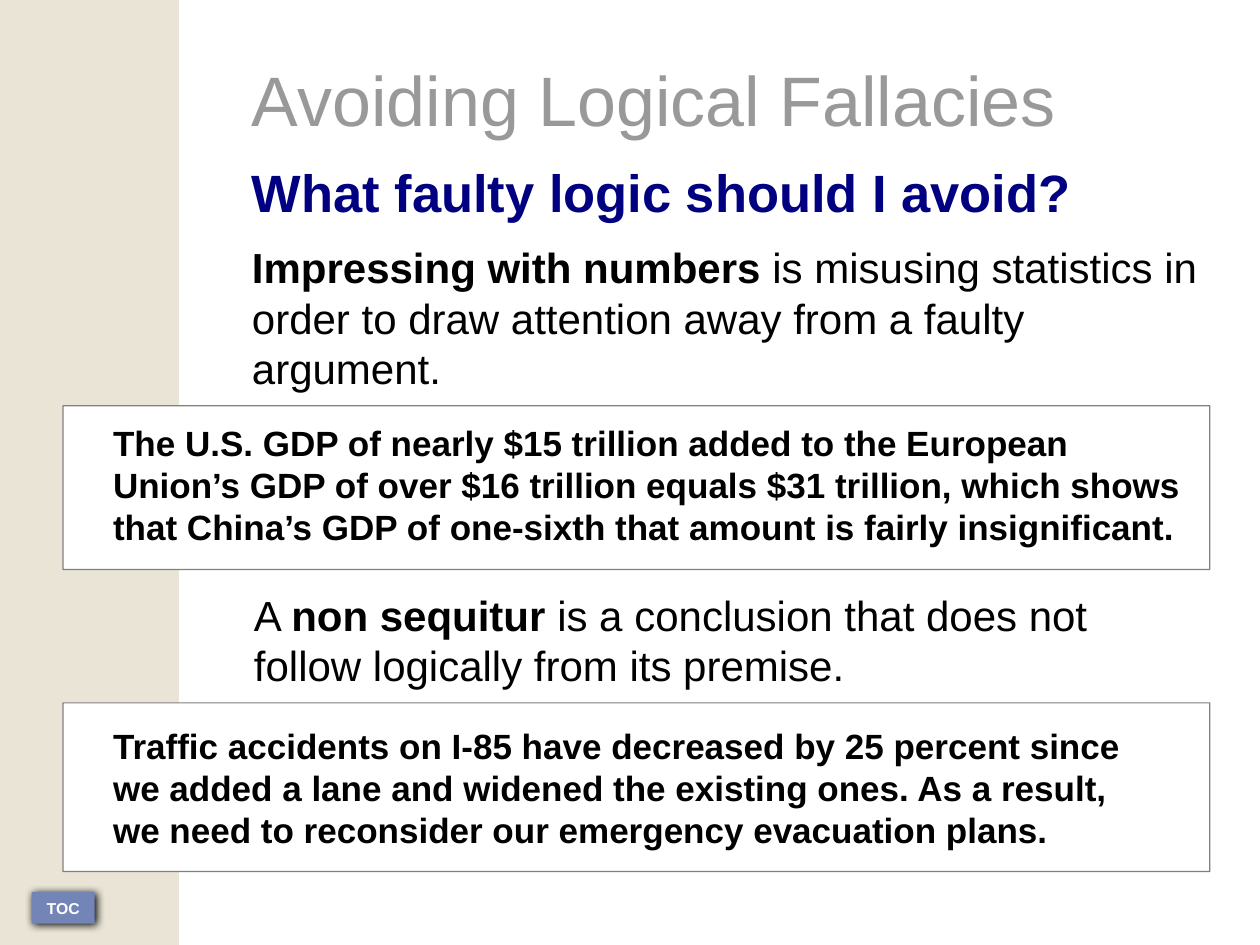
import dataclasses

import lxml.etree
import pptx
import pptx.dml.color
import pptx.enum.shapes
import pptx.enum.text
import pptx.oxml.ns
import pptx.util

Cm = pptx.util.Cm
Pt = pptx.util.Pt
SHAPES = pptx.enum.shapes.MSO_SHAPE


@dataclasses.dataclass(frozen=True)
class Theme:
    font: str = "Arial"
    sidebar: str = "E9E4D5"
    button: str = "7384B6"
    title: str = "999999"
    question: str = "000080"
    ink: str = "000000"
    paper: str = "FFFFFF"
    frame: str = "808080"
    title_size: int = 40
    question_size: int = 30
    definition_size: int = 24
    example_size: int = 20
    button_size: int = 9


THEME = Theme()


def rgb(value):
    return pptx.dml.color.RGBColor.from_string(value)


def add_panel(slide, kind, left, top, width, height, fill, line=None):
    panel = slide.shapes.add_shape(kind, Cm(left), Cm(top), Cm(width), Cm(height))
    panel.shadow.inherit = False
    panel.fill.solid()
    panel.fill.fore_color.rgb = rgb(fill)
    if line:
        panel.line.color.rgb = rgb(line)
        panel.line.width = Pt(0.71)
    else:
        panel.line.fill.background()
    return panel


def add_runs(paragraph, runs, size, color):
    for words, bold in runs:
        run = paragraph.add_run()
        run.text = words
        run.font.name = THEME.font
        run.font.size = Pt(size)
        run.font.bold = bold
        run.font.color.rgb = rgb(color)


def add_text(slide, left, top, width, height, paragraphs, space_after=0):
    box = slide.shapes.add_textbox(Cm(left), Cm(top), Cm(width), Cm(height))
    frame = box.text_frame
    frame.word_wrap = True
    for index, (runs, size, color) in enumerate(paragraphs):
        paragraph = frame.add_paragraph() if index else frame.paragraphs[0]
        paragraph.space_after = Pt(space_after)
        add_runs(paragraph, runs, size, color)


def add_example(slide, top, height, text_top, text_width, words):
    card = add_panel(slide, SHAPES.ROUNDED_RECTANGLE, 1.27, top, 23.12, height,
                     THEME.paper, THEME.frame)
    card.adjustments[0] = 0.001
    add_text(slide, 2.03, text_top, text_width, 2.79,
             [([(words, True)], THEME.example_size, THEME.ink)])


def add_drop_shadow(shape):
    qn = pptx.oxml.ns.qn
    effects = shape._element.spPr.find(qn("a:effectLst"))
    shadow = lxml.etree.SubElement(
        effects, qn("a:outerShdw"), blurRad=str(Pt(5)), dist=str(Pt(1.4)),
        dir="2700000", algn="ctr", rotWithShape="0")
    lxml.etree.SubElement(shadow, qn("a:srgbClr"), val=THEME.ink)


def add_contents_button(slide):
    button = add_panel(slide, SHAPES.RECTANGLE, 0.64, 17.98, 1.27, 0.64, THEME.button)
    add_drop_shadow(button)
    frame = button.text_frame
    frame.vertical_anchor = pptx.enum.text.MSO_ANCHOR.MIDDLE
    label = frame.paragraphs[0]
    label.alignment = pptx.enum.text.PP_ALIGN.CENTER
    add_runs(label, [("TOC", True)], THEME.button_size, THEME.paper)


def main():
    deck = pptx.Presentation()
    deck.slide_width, deck.slide_height = Cm(25.4), Cm(19.05)
    slide = deck.slides.add_slide(deck.slide_layouts[6])

    add_panel(slide, SHAPES.RECTANGLE, 0, 0, 3.61, 19.05, THEME.sidebar)
    add_contents_button(slide)
    add_text(slide, 4.83, 1.02, 19.56, 7.87, [
        ([("Avoiding Logical Fallacies", False)], THEME.title_size, THEME.title),
        ([("What faulty logic should I avoid?", True)],
         THEME.question_size, THEME.question),
        ([("Impressing with numbers", True),
          (" is misusing statistics in order to draw attention away "
           "from a faulty argument.", False)],
         THEME.definition_size, THEME.ink),
    ], space_after=10.9)
    add_example(
        slide, 8.18, 3.3, 8.38, 22.1,
        "The U.S. GDP of nearly $15 trillion added to the European Union’s GDP "
        "of over $16 trillion equals $31 trillion, which shows that China’s GDP "
        "of one-sixth that amount is fairly insignificant.")
    add_text(slide, 4.87, 11.75, 18.77, 2.34, [
        ([("A ", False), ("non sequitur", True),
          (" is a conclusion that does not follow logically from its premise.",
           False)],
         THEME.definition_size, THEME.ink),
    ])
    add_example(
        slide, 14.17, 3.4, 14.48, 21.11,
        "Traffic accidents on I-85 have decreased by 25 percent since we added "
        "a lane and widened the existing ones. As a result, we need to reconsider "
        "our emergency evacuation plans.")
    deck.save("out.pptx")


if __name__ == "__main__":
    main()
